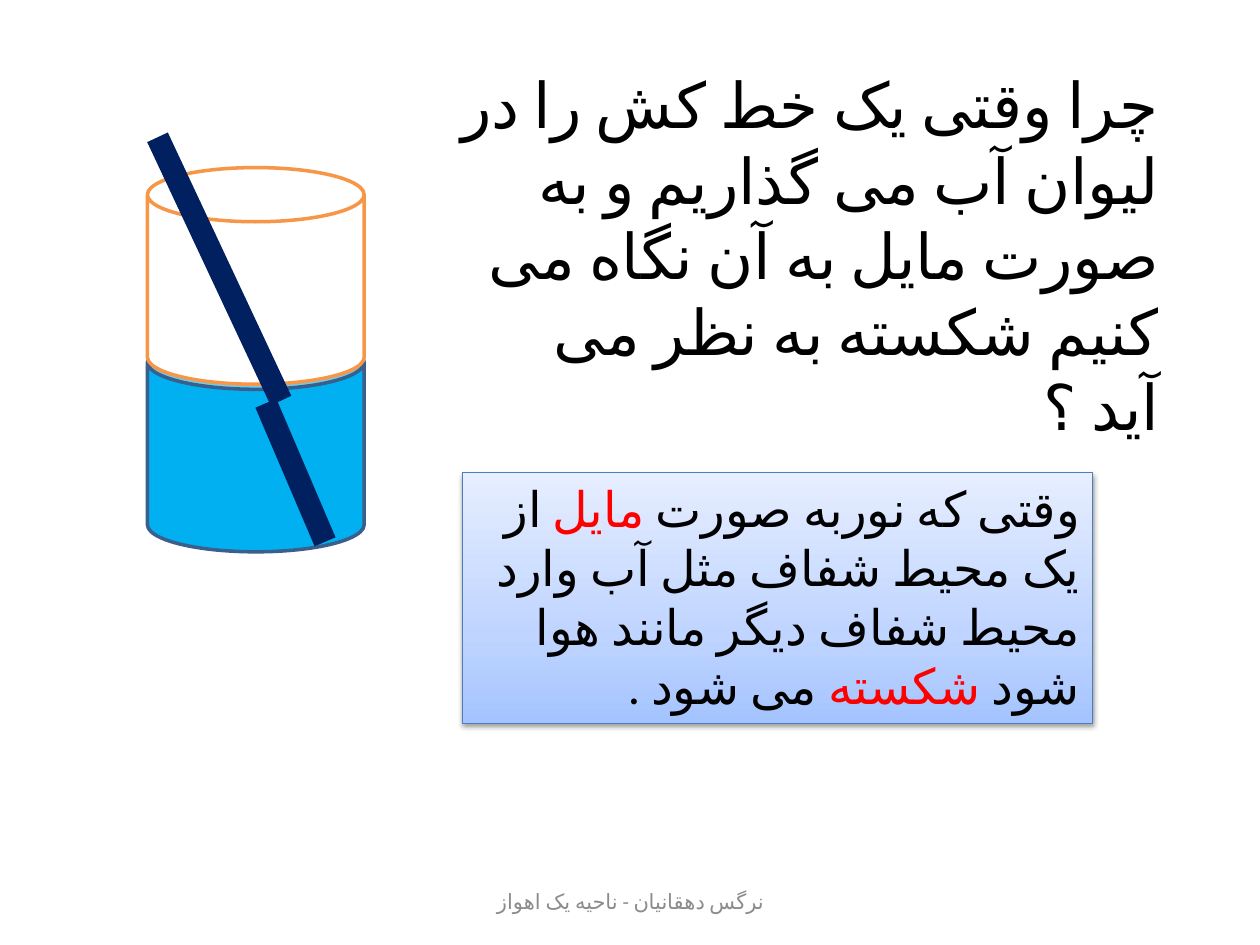
from copy import deepcopy

from lxml import etree
from pptx import Presentation
from pptx.dml.color import RGBColor
from pptx.enum.lang import MSO_LANGUAGE_ID as LANG
from pptx.enum.shapes import MSO_CONNECTOR, MSO_SHAPE
from pptx.enum.text import MSO_ANCHOR as ANCHOR, MSO_AUTO_SIZE as AUTO, PP_ALIGN as ALIGN
from pptx.oxml.ns import qn
from pptx.util import Inches, Pt

BLACK = RGBColor(0x00, 0x00, 0x00)
RED = RGBColor(0xFF, 0x00, 0x00)
WHITE = RGBColor(0xFF, 0xFF, 0xFF)
GRAY = RGBColor(0x8C, 0x8C, 0x8C)
WATER = RGBColor(0x00, 0xB0, 0xF0)
WATER_EDGE = RGBColor(0x3A, 0x5F, 0x8C)
GLASS_EDGE = RGBColor(0xF7, 0x96, 0x46)
RULER = RGBColor(0x00, 0x20, 0x60)
BOX_EDGE = RGBColor(0x4B, 0x7E, 0xBC)
BOX_STOPS = [
    (0, RGBColor(0xA4, 0xC4, 0xFF)),
    (0.35, RGBColor(0xBF, 0xD4, 0xFF)),
    (1, RGBColor(0xE6, 0xEE, 0xFF)),
]
FONT = "Calibri"

QUESTION = ("چرا وقتی یک خط کش را در لیوان آب می گذاریم و به صورت مایل "
            "به آن نگاه می کنیم شکسته به نظر می آید ؟")
ANSWER = [
    ("وقتی که نوربه صورت", BLACK),
    (" مایل ", RED),
    ("از یک محیط شفاف مثل آب وارد محیط شفاف دیگر مانند هوا شود", BLACK),
    (" شکسته ", RED),
    ("می شود .", BLACK),
]
FOOTER = "نرگس دهقانیان - ناحیه یک اهواز"


def write_rtl(sp, runs, size, align, anchor=ANCHOR.TOP, auto=AUTO.SHAPE_TO_FIT_TEXT):
    """Fill a shape with one right-to-left Persian paragraph of coloured runs."""
    tf = sp.text_frame
    tf.word_wrap = True
    tf.auto_size = auto
    tf.vertical_anchor = anchor
    p = tf.paragraphs[0]
    p.alignment = align
    p.font.name = FONT
    p.font.size = Pt(size)
    p._p.get_or_add_pPr().set("rtl", "1")
    for text, color in runs:
        r = p.add_run()
        r.text = text
        r.font.color.rgb = color
        r.font.language_id = LANG.FARSI
        # Complex-script typeface, used for Persian letters
        etree.SubElement(r._r.get_or_add_rPr(), qn("a:cs"), typeface=FONT)


def add_can(s, top, fill, edge):
    sp = s.shapes.add_shape(MSO_SHAPE.CAN, Inches(1.17), Inches(top), Inches(1.72), Inches(1.72))
    sp.shadow.inherit = False
    sp.fill.solid()
    sp.fill.fore_color.rgb = fill
    sp.line.color.rgb = edge
    sp.line.width = Pt(2)


def add_ruler_part(s, x1, y1, x2, y2):
    line = s.shapes.add_connector(
        MSO_CONNECTOR.STRAIGHT, Inches(x1), Inches(y1), Inches(x2), Inches(y2))
    line.line.color.rgb = RULER
    line.line.width = Pt(13)
    etree.SubElement(line._element.spPr, qn("a:effectLst"))


def add_gradient(sp, stops, angle):
    sp.fill.gradient()
    sp.fill.gradient_angle = angle
    gs_list = sp._element.spPr.find(qn("a:gradFill")).find(qn("a:gsLst"))
    while len(gs_list) < len(stops):
        gs_list.append(deepcopy(gs_list[-1]))
    for stop, (position, color) in zip(sp.fill.gradient_stops, stops):
        stop.position = position
        stop.color.rgb = color


def add_drop_shadow(sp):
    sp.shadow.inherit = False
    effects = sp._element.spPr.find(qn("a:effectLst"))
    shadow = etree.SubElement(effects, qn("a:outerShdw"), blurRad=str(Pt(3.1)),
                              dist=str(Pt(1.6)), dir="5400000", rotWithShape="0")
    color = etree.SubElement(shadow, qn("a:srgbClr"), val="000000")
    etree.SubElement(color, qn("a:alpha"), val="38000")


def add_answer(s):
    sp = s.shapes.add_shape(MSO_SHAPE.RECTANGLE, Inches(3.67), Inches(3.75), Inches(5), Inches(1.99))
    add_gradient(sp, BOX_STOPS, 90)
    sp.line.color.rgb = BOX_EDGE
    sp.line.width = Pt(0.75)
    add_drop_shadow(sp)
    write_rtl(sp, ANSWER, 28, ALIGN.RIGHT)


def add_question(s):
    title = s.shapes.title
    title.left, title.top = Inches(3.28), Inches(0.47)
    title.width, title.height = Inches(6.02), Inches(2.52)
    write_rtl(title, [(QUESTION, BLACK)], 36, ALIGN.RIGHT)


def add_footer(s):
    sp = s.shapes.add_textbox(Inches(3.42), Inches(6.95), Inches(3.17), Inches(0.4))
    write_rtl(sp, [(FOOTER, GRAY)], 12, ALIGN.CENTER, ANCHOR.MIDDLE, AUTO.NONE)


def main():
    prs = Presentation()
    prs.slide_width, prs.slide_height = Inches(10), Inches(7.5)
    s = prs.slides.add_slide(prs.slide_layouts[5])

    # Glass of water: the empty upper part overlaps the water
    add_can(s, 2.66, WATER, WATER_EDGE)
    add_can(s, 1.33, WHITE, GLASS_EDGE)

    # Ruler that looks broken at the surface
    add_ruler_part(s, 1.25, 1.09, 2.23, 3.18)
    add_ruler_part(s, 2.11, 3.2, 2.58, 4.3)

    # Texts
    add_answer(s)
    add_question(s)
    add_footer(s)
    prs.save("out.pptx")


if __name__ == "__main__":
    main()
